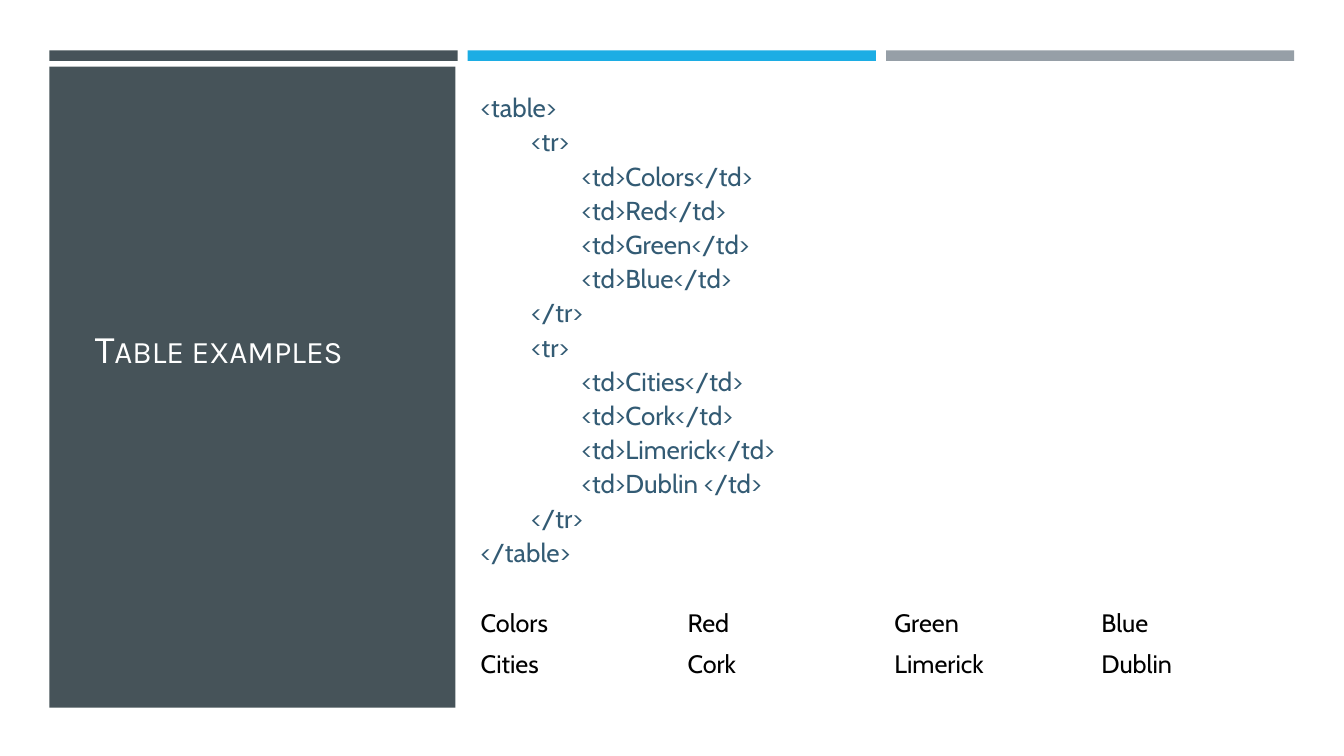
from dataclasses import dataclass

from pptx import Presentation
from pptx.dml.color import RGBColor
from pptx.enum.shapes import MSO_SHAPE
from pptx.enum.text import MSO_ANCHOR, MSO_AUTO_SIZE, PP_ALIGN
from pptx.oxml.xmlchemy import OxmlElement
from pptx.util import Pt

RECT = MSO_SHAPE.RECTANGLE
TOP, MIDDLE = MSO_ANCHOR.TOP, MSO_ANCHOR.MIDDLE
LEFT = PP_ALIGN.LEFT
NO_FIT = MSO_AUTO_SIZE.NONE


@dataclass(frozen=True)
class Theme:
    slate: str = "465359"
    sky: str = "1CADE4"
    gray: str = "969FA7"
    navy: str = "335B74"
    white: str = "FFFFFF"
    black: str = "000000"
    head: str = "Karla"
    text: str = "Cabin"
    title: float = 28
    code: float = 18.5
    cell: float = 18


THEME = Theme()
ROWS = [
    ["Colors", "Red", "Green", "Blue"],
    ["Cities", "Cork", "Limerick", "Dublin "],
]
INDENT = 36
BAR_LEFT, BAR_STEP, BAR_WIDTH = 35.3, 298.8, 291.6


def apply(item, form):
    for name, value in form.items():
        setattr(item, name, value)


def place(shape, box):
    names = ("left", "top", "width", "height")
    apply(shape, dict(zip(names, map(Pt, box))))


def style(font, name, size, color):
    apply(font, {"name": name, "size": Pt(size), "bold": False})
    font.color.rgb = RGBColor.from_string(color)


def add_block(slide, box, color):
    shape = slide.shapes.add_shape(RECT, *map(Pt, box))
    shape.shadow.inherit = False
    shape.fill.solid()
    shape.fill.fore_color.rgb = RGBColor.from_string(color)
    shape.line.fill.background()
    tree = shape.element.getparent()
    tree.insert(2, shape.element)


def set_frame(shape, box, anchor):
    place(shape, box)
    frame = shape.text_frame
    apply(frame, {"word_wrap": True, "auto_size": NO_FIT, "vertical_anchor": anchor})
    return frame


def add_line(para, text, font, depth=0):
    run = para.add_run()
    run.text = text
    style(run.font, *font)
    apply(para, {"alignment": LEFT, "level": depth, "line_spacing": 1.1,
                 "space_before": Pt(0), "space_after": Pt(0)})
    props = para._p.get_or_add_pPr()
    props.set("marL", str(Pt(INDENT * depth)))
    props.set("indent", "0")
    props.append(OxmlElement("a:buNone"))
    return run


def set_title(slide, text, box):
    frame = set_frame(slide.shapes.title, box, TOP)
    font = THEME.head, THEME.title, THEME.white
    run = add_line(frame.paragraphs[0], text, font)
    run.font._element.set("cap", "small")


def markup(rows):
    yield 0, "<table>"
    for row in rows:
        yield 1, "<tr>"
        for word in row:
            yield 2, f"<td>{word}</td>"
        yield 1, "</tr>"
    yield 0, "</table>"


def set_code(slide, rows, box):
    frame = set_frame(slide.placeholders[1], box, MIDDLE)
    font = THEME.text, THEME.code, THEME.navy
    for index, (depth, text) in enumerate(markup(rows)):
        para = frame.add_paragraph() if index else frame.paragraphs[0]
        add_line(para, text, font, depth)


def add_grid(slide, rows, box):
    grid = slide.shapes.add_table(len(rows), len(rows[0]), *map(Pt, box)).table
    apply(grid, {"first_row": False, "horz_banding": False})
    for r, row in enumerate(rows):
        for c, word in enumerate(row):
            cell = grid.cell(r, c)
            cell.fill.background()
            cell.text = word.strip()
            font = cell.text_frame.paragraphs[0].runs[0].font
            style(font, THEME.text, THEME.cell, THEME.black)


def main():
    deck = Presentation()
    apply(deck, {"slide_width": Pt(960), "slide_height": Pt(540)})
    slide = deck.slides.add_slide(deck.slide_layouts[1])
    for index, color in enumerate((THEME.slate, THEME.sky, THEME.gray)):
        left = BAR_LEFT + index * BAR_STEP
        add_block(slide, (left, 36, BAR_WIDTH, 7.5), color)
    add_block(slide, (BAR_LEFT, 47.5, 290, 458), THEME.slate)
    set_title(slide, "Table examples", (60.5, 225, 239, 236))
    set_code(slide, ROWS, (336.2, 51.1, 591.1, 366.5))
    add_grid(slide, ROWS, (336.2, 430.6, 591.1, 58.4))
    deck.save("out.pptx")


if __name__ == "__main__":
    main()
